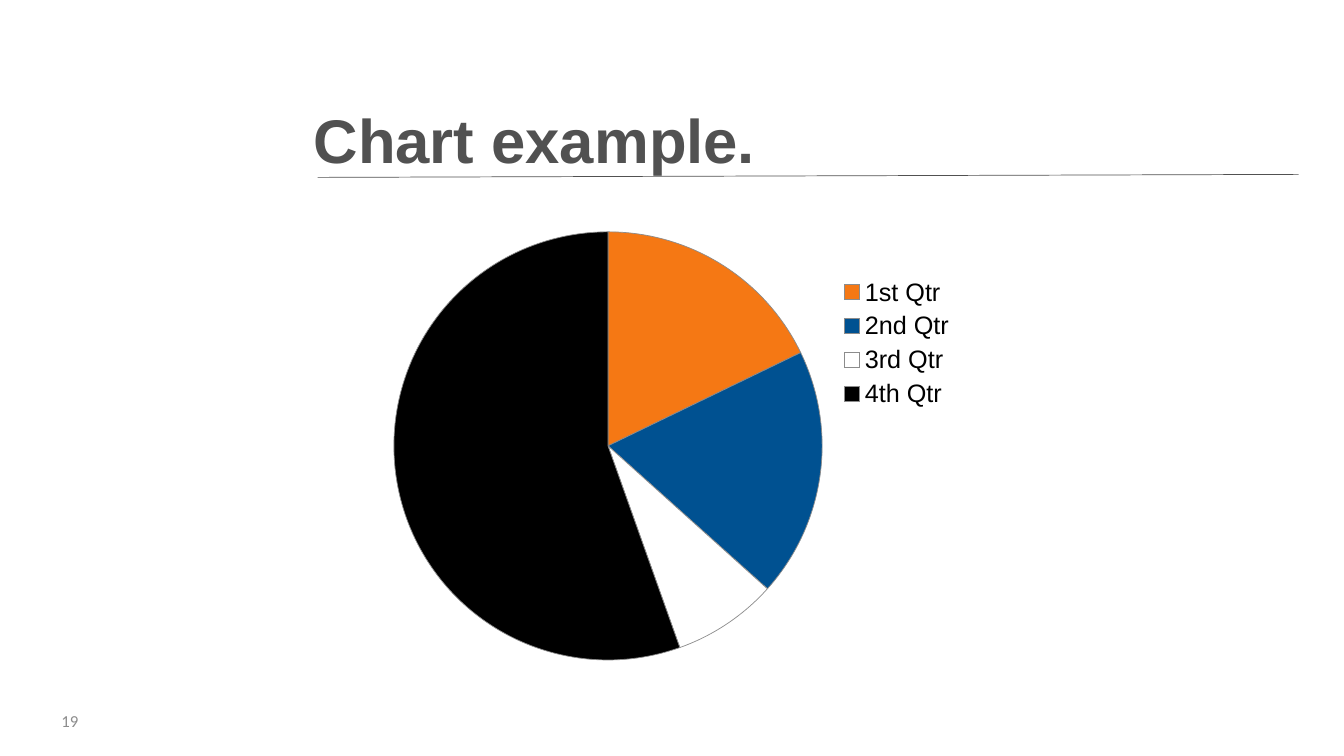
from lxml.etree import SubElement
from pptx import Presentation
from pptx.chart.data import CategoryChartData
from pptx.dml.color import RGBColor
from pptx.enum.chart import XL_CHART_TYPE as CT, XL_LEGEND_POSITION as LP
from pptx.enum.shapes import MSO_CONNECTOR as MC
from pptx.enum.text import MSO_ANCHOR as MA, PP_ALIGN as PA
from pptx.oxml import parse_xml
from pptx.oxml.ns import nsdecls, qn
from pptx.util import Inches, Pt

GRAY = RGBColor(0x51, 0x51, 0x51)
PALE_GRAY = RGBColor(0x8C, 0x8C, 0x8C)
ORANGE = RGBColor(0xF5, 0x78, 0x14)
BLUE = RGBColor(0x00, 0x51, 0x91)
WHITE = RGBColor(0xFF, 0xFF, 0xFF)
BLACK = RGBColor(0x00, 0x00, 0x00)

QUARTERS = [("1st Qtr", 18, ORANGE), ("2nd Qtr", 19, BLUE),
            ("3rd Qtr", 8, WHITE), ("4th Qtr", 56, BLACK)]

# Boxes in inches: left, top, width, height
TITLE_BOX = (3.01, 0.54, 9.75, 1.26)
CHART_BOX = (2.7, 2.16, 7.94, 4.52)
NUMBER_BOX = (0.51, 6.95, 3, 0.4)

# Shares of the chart's box: x, y, width, height
PIE_SHARE = (0.152, 0.031, 0.535, 0.94)
LEGEND_SHARE = (0.7, 0.12, 0.16, 0.31)


def set_font(font, color, **values):
    for name, value in values.items():
        setattr(font, name, value)
    font.color.rgb = color


def set_text(sp, text, anchor, color, **values):
    tf = sp.text_frame
    tf.word_wrap = True
    tf.vertical_anchor = anchor
    p = tf.paragraphs[0]
    p.alignment = PA.LEFT
    r = p.add_run()
    r.text = text
    set_font(r.font, color, **values)
    return p


def add_title(slide, box, text):
    sp = slide.shapes.title
    sp.left, sp.top, sp.width, sp.height = map(Inches, box)
    p = set_text(sp, text, MA.BOTTOM, GRAY, name="Arial", size=Pt(44), bold=True)
    p.line_spacing = 0.9

    # Rule under the title
    left, top, width, height = box
    bottom = top + height
    ends = (left + 0.14, bottom - 0.04, left + width + 0.12, bottom - 0.07)
    rule = slide.shapes.add_connector(MC.STRAIGHT, *map(Inches, ends))
    rule.line.color.rgb = GRAY
    rule.line.width = Pt(0.5)
    SubElement(rule._element.spPr, qn("a:effectLst"))


def manual_layout(shares, inner=False):
    target = '<c:layoutTarget val="inner"/>' if inner else ""
    modes = "".join(f'<c:{axis}Mode val="edge"/>' for axis in "xy")
    sizes = "".join(f'<c:{key} val="{share}"/>' for key, share in zip("xywh", shares))
    return parse_xml(f'<c:layout {nsdecls("c")}><c:manualLayout>{target}{modes}{sizes}'
                     '</c:manualLayout></c:layout>')


def add_pie(slide, box, quarters):
    data = CategoryChartData()
    data.categories = [name for name, _, _ in quarters]
    data.add_series("Series 1", [value for _, value, _ in quarters])
    chart = slide.shapes.add_chart(CT.PIE, *map(Inches, box), data).chart
    chart.has_title = False
    set_font(chart.font, BLACK, name="Calibri", size=Pt(18))

    # Slices
    plot = chart.plots[0]
    plot.vary_by_categories = True
    for i, (_, _, color) in enumerate(quarters):
        fmt = plot.series[0].points[i].format
        fmt.fill.solid()
        fmt.fill.fore_color.rgb = color
        fmt.line.color.rgb = PALE_GRAY
        fmt.line.width = Pt(0.5)

    # Legend
    chart.has_legend = True
    legend = chart.legend
    legend.position = LP.RIGHT
    legend.include_in_layout = False
    set_font(legend.font, BLACK, name="Arial", size=Pt(18))

    # Placement inside the chart's box
    area = plot._element.getparent()
    for old in area.findall(qn("c:layout")):
        area.remove(old)
    area.insert(0, manual_layout(PIE_SHARE, inner=True))
    for old in legend._element.findall(qn("c:layout")):
        legend._element.remove(old)
    legend._element.find(qn("c:legendPos")).addnext(manual_layout(LEGEND_SHARE))


def add_number(slide, box, text):
    sp = slide.shapes.add_textbox(*map(Inches, box))
    set_text(sp, text, MA.MIDDLE, PALE_GRAY, name="Calibri", size=Pt(12))


def main():
    prs = Presentation()
    prs.slide_width, prs.slide_height = Inches(13.33), Inches(7.5)
    slide = prs.slides.add_slide(prs.slide_layouts[5])
    add_title(slide, TITLE_BOX, "Chart example.")
    add_pie(slide, CHART_BOX, QUARTERS)
    add_number(slide, NUMBER_BOX, "19")
    prs.save("out.pptx")


if __name__ == "__main__":
    main()
